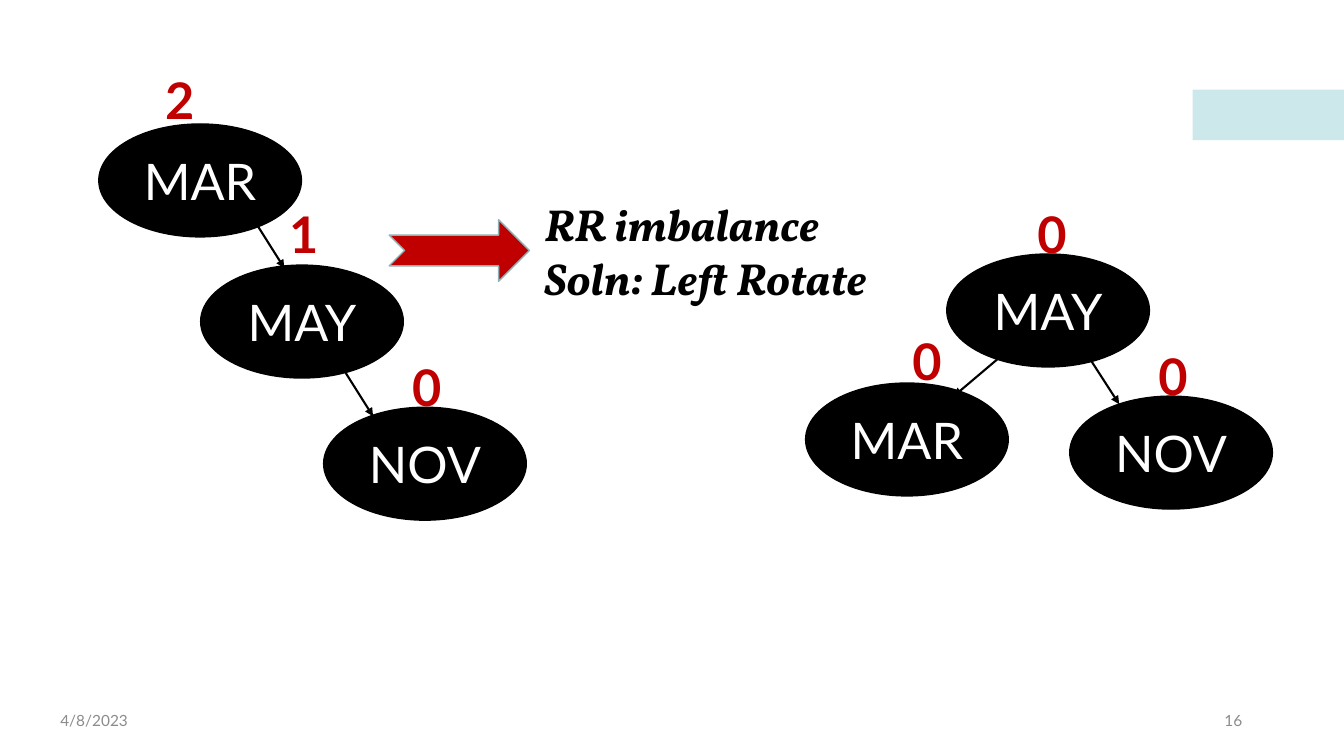
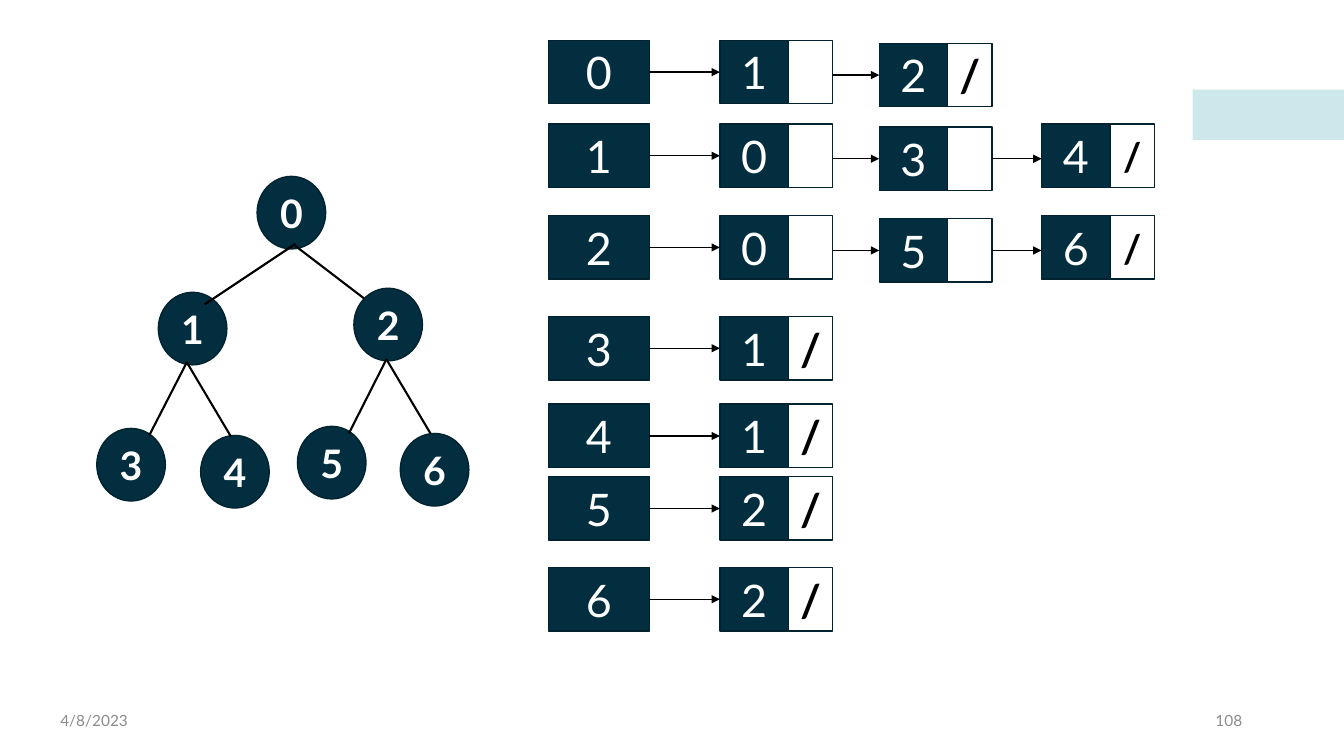
import pptx
import pptx.util
import pptx.dml.color
import pptx.enum.shapes
import pptx.enum.text
import pptx.oxml
import pptx.oxml.ns

Inches = pptx.util.Inches
SHAPE = pptx.enum.shapes.MSO_SHAPE
ALIGN = pptx.enum.text.PP_ALIGN
ANCHOR = pptx.enum.text.MSO_ANCHOR

COLORS = {
    "band": "9CD3D9", "footer": "8C8C8C", "black": "000000", "white": "FFFFFF",
    "red": "C00000", "arrow_line": "91B0B3", "navy": "022E40", "navy_line": "01222F",
}

# Text styles
FOOTER = {"size": 11, "color": "footer"}
MONTH = {"size": 36, "color": "white"}
BALANCE = {"size": 36, "color": "red", "bold": True}
REMARK = {"size": 32, "color": "black", "bold": True, "italic": True, "name": "Vollkorn"}
VERTEX = {"size": 28, "color": "white", "bold": True}
KEY = {"size": 32, "color": "white"}
SLASH = {"size": 32, "color": "black", "bold": True}

# Tree node styles
MONTH_NODE = {"size": (2.01, 1.12), "fill": "black", "line": "black", "text": MONTH}
VERTEX_NODE = {"size": (0.68, 0.72), "fill": "navy", "line": "navy_line", "text": VERTEX}


def rgb(name):
    return pptx.dml.color.RGBColor.from_string(COLORS[name])


def write(tf, lines, style, align=ALIGN.LEFT):
    values = {"name": "Lato", **style}
    color = values.pop("color")
    values["size"] = pptx.util.Pt(values["size"])
    for i, line in enumerate(lines):
        p = tf.paragraphs[0] if i == 0 else tf.add_paragraph()
        p.alignment = align
        r = p.add_run()
        r.text = line
        for key, value in values.items():
            setattr(r.font, key, value)
        r.font.color.rgb = rgb(color)


def add_text(s, box, lines, style, align=ALIGN.LEFT, anchor=ANCHOR.TOP, wrap=True):
    tf = s.shapes.add_textbox(*map(Inches, box)).text_frame
    tf.word_wrap = wrap
    tf.vertical_anchor = anchor
    write(tf, lines, style, align)


def add_shape(s, kind, box, fill, line=None, text="", style=None):
    sp = s.shapes.add_shape(kind, *map(Inches, box))
    sp.shadow.inherit = False
    sp.fill.solid()
    sp.fill.fore_color.rgb = rgb(fill)
    if line:
        sp.line.color.rgb = rgb(line)
        sp.line.width = pptx.util.Pt(1)
    else:
        sp.line.fill.background()
    if text:
        sp.text_frame.vertical_anchor = ANCHOR.MIDDLE
        write(sp.text_frame, [text], style, ALIGN.CENTER)
    return sp


def add_line(s, ends, width, arrow):
    line = s.shapes.add_connector(pptx.enum.shapes.MSO_CONNECTOR.STRAIGHT, *map(Inches, ends))
    line.line.color.rgb = rgb("black")
    line.line.width = pptx.util.Pt(width)
    if arrow:
        ln = line.line._get_or_add_ln()
        pptx.oxml.ns.qn("a:tailEnd")
        ln.append(pptx.oxml.parse_xml(
            "<a:tailEnd %s type='triangle'/>" % pptx.oxml.ns.nsdecls("a")))
    line._element.spPr.append(pptx.oxml.parse_xml(
        "<a:effectLst %s/>" % pptx.oxml.ns.nsdecls("a")))
    return line


def add_base(prs, number):
    """Blank slide with the side band, the date and the slide number."""
    s = prs.slides.add_slide(prs.slide_layouts[6])
    band = add_shape(s, SHAPE.RECTANGLE, (11.83, 0.89, 1.5, 0.5), "band")
    clr = band.fill._xPr.find(".//" + pptx.oxml.ns.qn("a:srgbClr"))
    clr.append(pptx.oxml.parse_xml(
        "<a:alpha %s val='50000'/>" % pptx.oxml.ns.nsdecls("a")))
    add_text(s, (0.5, 6.95, 3, 0.4), ["4/8/2023"], FOOTER, anchor=ANCHOR.MIDDLE)
    add_text(s, (9.42, 6.95, 3, 0.4), [number], FOOTER, ALIGN.RIGHT, ANCHOR.MIDDLE)
    return s


def add_tree(s, left, top, nodes, edges, look, arrow=False, balances=()):
    """Tree whose nodes, edges and balance factors are offsets from left, top."""
    for text, x, y in nodes:
        add_shape(s, SHAPE.OVAL, (left + x, top + y, *look["size"]),
                  look["fill"], look["line"], text, look["text"])
    for x1, y1, x2, y2 in edges:
        add_line(s, (left + x1, top + y1, left + x2, top + y2), 1.5, arrow)
    for text, x, y in balances:
        add_text(s, (left + x, top + y, 0.44, 0.71), [text], BALANCE, wrap=False)


def add_adjacency_row(s, left, top, key, neighbours):
    """Head cell followed by a linked list of neighbour records."""
    height, key_w, link_w = 0.63, 0.68, 0.44
    columns = ((1.7, 0), (3.28, 0.03), (4.89, 0))  # offset and drop of each record
    last = add_shape(s, SHAPE.RECTANGLE, (left, top, 1, height),
                     "navy", "navy_line", key, KEY)
    last_x, last_drop = left + 1, 0
    for i, (text, (dx, drop)) in enumerate(zip(neighbours, columns)):
        x, y = left + dx, top + drop
        is_end = i == len(neighbours) - 1
        cell = add_shape(s, SHAPE.RECTANGLE, (x, y, key_w, height),
                         "navy", "navy_line", text, KEY)
        link = add_shape(s, SHAPE.RECTANGLE, (x + key_w, y, link_w, height),
                         "white", "navy_line", "/" if is_end else "",
                         {**SLASH, "size": 28 if i == 2 else 32})
        # The arrow is level with the lower of the two records
        level = max(drop, last_drop)
        mid = top + level + height / 2
        arrow = add_line(s, (last_x, mid, x, mid), 1, True)
        if last_drop == level:
            arrow.begin_connect(last, 3)
        if drop == level:
            arrow.end_connect(cell, 1)
        last, last_x, last_drop = link, x + key_w + link_w, drop


def rotation_slide(prs):
    s = add_base(prs, "16")
    # Unbalanced tree
    add_tree(s, 0.98, 0.64,
             [("MAR", 0, 0.59), ("MAY", 1.01, 1.99), ("NOV", 2.23, 3.4)],
             [(1.55, 1.56, 1.84, 2.02), (2.43, 3.03, 2.72, 3.49)],
             MONTH_NODE, True,
             [("2", 0.56, 0), ("1", 1.79, 1.33), ("0", 3.01, 2.84)])
    # Remark
    add_shape(s, SHAPE.NOTCHED_RIGHT_ARROW, (3.86, 2.18, 1.39, 0.61), "red", "arrow_line")
    add_text(s, (5.3, 1.9, 4.04, 1.18), ["RR imbalance", "Soln: Left Rotate"], REMARK)
    # Balanced tree
    add_tree(s, 7.99, 1.97,
             [("MAR", 0, 1.83), ("MAY", 1.4, 0.55), ("NOV", 2.62, 1.96)],
             [(1.99, 1.52, 1.47, 1.96), (2.82, 1.59, 3.11, 2.04)],
             MONTH_NODE, True,
             [("0", 2.2, 0), ("0", 0.96, 1.26), ("0", 3.4, 1.4)])


def adjacency_slide(prs):
    s = add_base(prs, "108")
    # Graph
    add_tree(s, 0.96, 1.75,
             [("0", 1.59, 0), ("1", 0.61, 1.15), ("2", 2.55, 1.11), ("3", 0, 2.5),
              ("4", 1.03, 2.57), ("5", 1.99, 2.48), ("6", 3.01, 2.55)],
             [(1.97, 0.67, 1.07, 1.27), (1.97, 0.69, 2.65, 1.21),
              (0.89, 1.85, 0.52, 2.57), (0.89, 1.84, 1.33, 2.58),
              (2.87, 1.82, 2.5, 2.55), (2.87, 1.81, 3.31, 2.55)],
             VERTEX_NODE)
    # Adjacency lists
    tops = (0.4, 1.23, 2.14, 3.14, 4.01, 4.73, 5.63)
    lists = ("12", "034", "056", "1", "1", "2", "2")
    for key, (top, neighbours) in enumerate(zip(tops, lists)):
        add_adjacency_row(s, 5.44, top, str(key), neighbours)


def main():
    prs = pptx.Presentation()
    prs.slide_width, prs.slide_height = Inches(13.33), Inches(7.5)
    rotation_slide(prs)
    adjacency_slide(prs)
    prs.save("out.pptx")


if __name__ == "__main__":
    main()
